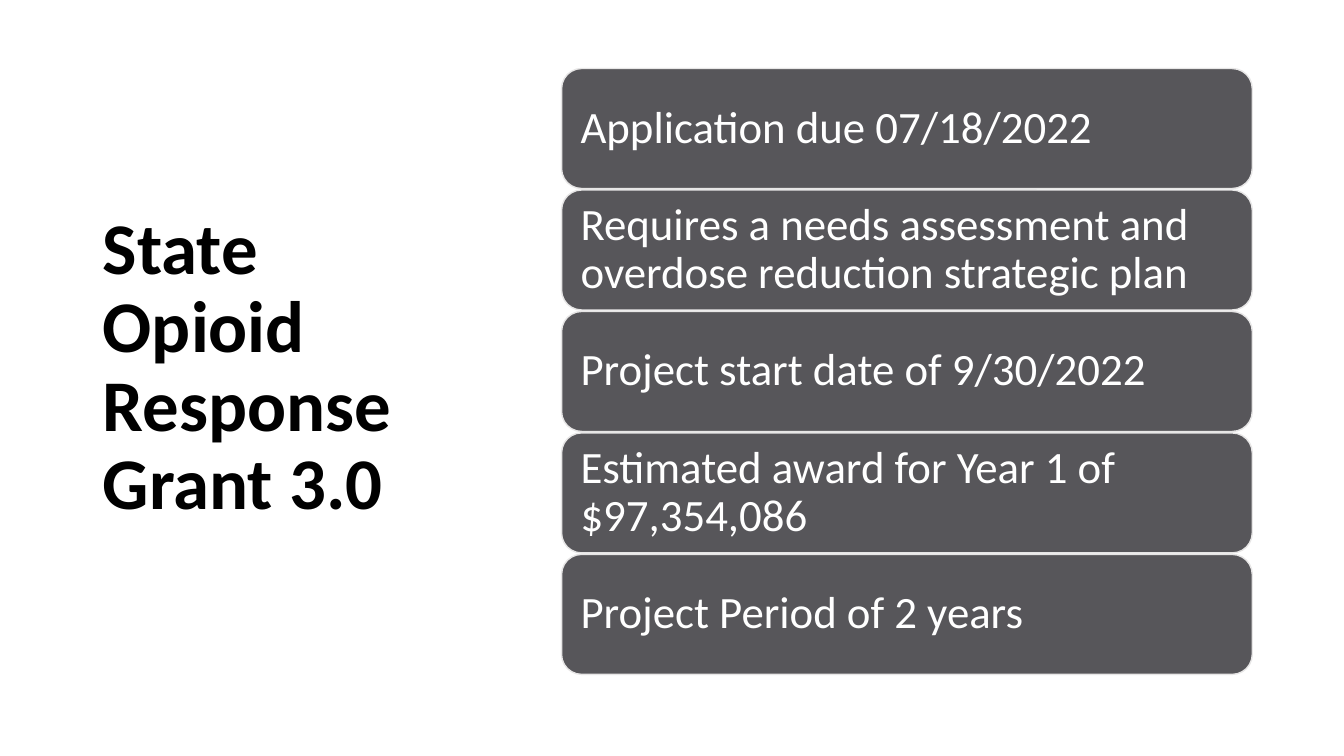
from pptx import Presentation
from pptx.dml.color import RGBColor
from pptx.enum.shapes import MSO_SHAPE
from pptx.enum.text import MSO_ANCHOR, MSO_AUTO_SIZE, PP_ALIGN
from pptx.util import Inches, Pt

ROUNDED = MSO_SHAPE.ROUNDED_RECTANGLE
MIDDLE = MSO_ANCHOR.MIDDLE
LEFT = PP_ALIGN.LEFT
NO_FIT = MSO_AUTO_SIZE.NONE
TITLE_ONLY = 5

COLORS = {"title": "000000", "card": "57565A", "border": "E7E6E6", "text": "FFFFFF"}
FONT = "Calibri"

# Card column, in inches
CARD_LEFT, CARD_TOP = 5.57, 0.68
CARD_WIDTH, CARD_HEIGHT = 6.85, 1.19
CARD_GAP = 0.015
CARD_INSET = 0.13

FACTS = [
    "Application due 07/18/2022",
    "Requires a needs assessment and overdose reduction strategic plan",
    "Project start date of 9/30/2022",
    "Estimated award for Year 1 of $97,354,086",
    "Project Period of 2 years",
]


def color(name):
    return RGBColor.from_string(COLORS[name])


def apply_format(target, values):
    for name, value in values.items():
        setattr(target, name, value)


def write_text(shape, text, size, color_name, bold=False, inset=None):
    frame = shape.text_frame
    frame.text = text
    apply_format(frame, {"word_wrap": True, "auto_size": NO_FIT, "vertical_anchor": MIDDLE})
    if inset is not None:
        sides = ("left", "top", "right", "bottom")
        apply_format(frame, {f"margin_{side}": Inches(inset) for side in sides})
    paragraph = frame.paragraphs[0]
    apply_format(paragraph, {"alignment": LEFT, "line_spacing": 0.9})
    apply_format(paragraph.font, {"name": FONT, "size": Pt(size), "bold": bold})
    paragraph.font.color.rgb = color(color_name)


def place_title(slide, text):
    title = slide.shapes.title
    apply_format(title, {"left": Inches(0.92), "top": Inches(0.61),
                         "width": Inches(3.69), "height": Inches(6.09)})
    write_text(title, text, 52, "title", bold=True)


def add_card(slide, row, text):
    top = CARD_TOP + row * (CARD_HEIGHT + CARD_GAP)
    card = slide.shapes.add_shape(ROUNDED, Inches(CARD_LEFT), Inches(top),
                                  Inches(CARD_WIDTH), Inches(CARD_HEIGHT))
    card.shadow.inherit = False
    card.fill.solid()
    card.fill.fore_color.rgb = color("card")
    card.line.color.rgb = color("border")
    card.line.width = Pt(1)
    write_text(card, text, 32, "text", inset=CARD_INSET)


def main():
    presentation = Presentation()
    presentation.slide_width = Inches(13.33)
    presentation.slide_height = Inches(7.5)
    slide = presentation.slides.add_slide(presentation.slide_layouts[TITLE_ONLY])

    # Title on the left
    place_title(slide, "State Opioid Response Grant 3.0")

    # Stacked grant facts on the right
    for row, fact in enumerate(FACTS):
        add_card(slide, row, fact)

    presentation.save("out.pptx")


if __name__ == "__main__":
    main()
